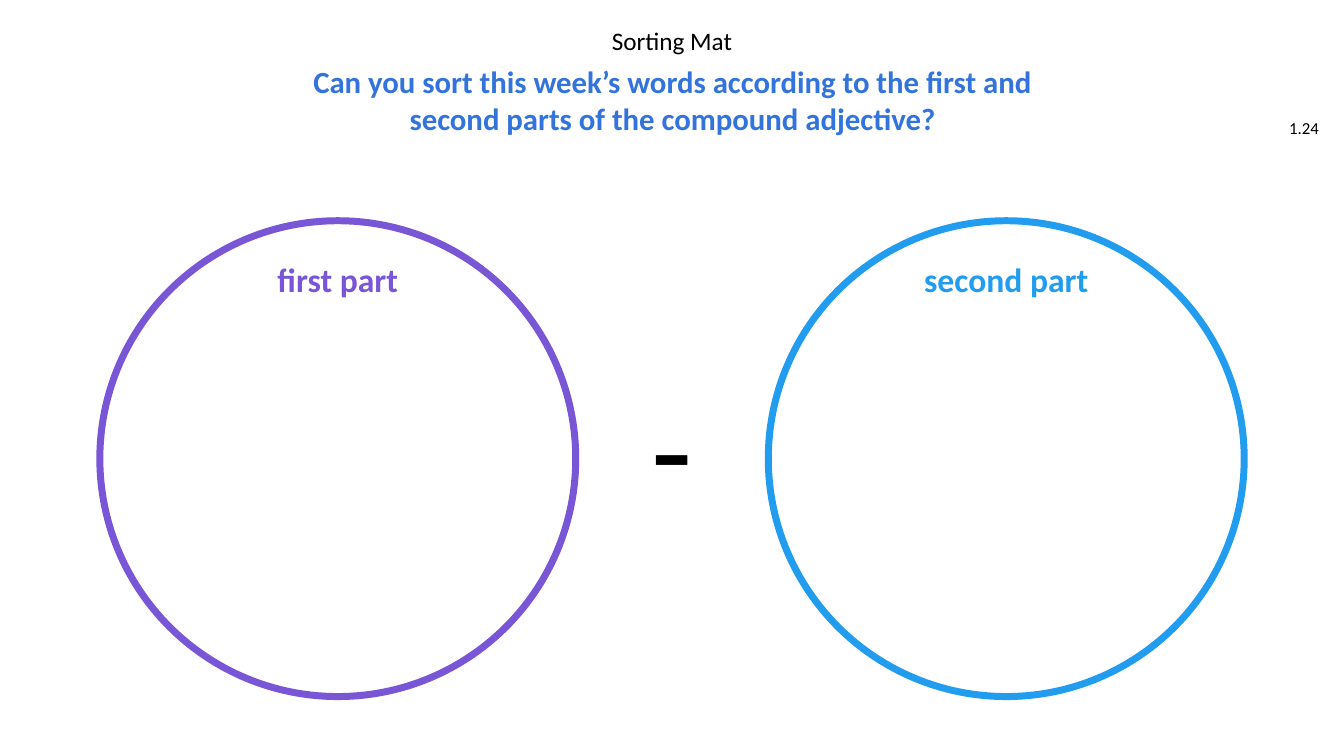
from dataclasses import dataclass

from pptx import Presentation
from pptx.dml.color import RGBColor
from pptx.enum import shapes, text
from pptx.util import Inches, Pt


@dataclass(frozen=True)
class Theme:
    font: str = "Calibri"
    black: str = "000000"
    blue: str = "3373DC"
    purple: str = "7956D6"
    sky: str = "219CEE"
    number_size: int = 12
    title_size: int = 18
    question_size: int = 22
    label_size: int = 24
    hyphen_size: int = 96
    ring_width: int = 5


THEME = Theme()
RING_TOP = 2.19
RING_SIZE = 4.72
LABEL_TOP = 2.52
LABEL_WIDTH = 2.64


def add_text(s, words, box, size, color, bold=False, wrap=True,
             align=text.PP_ALIGN.CENTER, anchor=text.MSO_ANCHOR.TOP):
    """Add a one-paragraph text box; box is left, top, width, height in inches."""
    tf = s.shapes.add_textbox(*map(Inches, box)).text_frame
    tf.word_wrap = wrap
    tf.vertical_anchor = anchor
    p = tf.paragraphs[0]
    p.text = words
    p.alignment = align
    font = p.runs[0].font
    font.name = THEME.font
    font.size = Pt(size)
    font.bold = bold
    font.color.rgb = RGBColor.from_string(color)
    return p


def add_sorting_ring(s, label, left, color):
    ring = s.shapes.add_shape(shapes.MSO_SHAPE.OVAL, Inches(left), Inches(RING_TOP),
                              Inches(RING_SIZE), Inches(RING_SIZE))
    ring.shadow.inherit = False
    ring.fill.background()
    ring.line.color.rgb = RGBColor.from_string(color)
    ring.line.width = Pt(THEME.ring_width)
    label_left = left + (RING_SIZE - LABEL_WIDTH) / 2
    add_text(s, label, (label_left, LABEL_TOP, LABEL_WIDTH, 0.5),
             THEME.label_size, color, bold=True)


def main():
    prs = Presentation()
    prs.slide_width, prs.slide_height = Inches(13.33), Inches(7.5)
    s = prs.slides.add_slide(prs.slide_layouts[6])

    add_text(s, "1.24", (12.55, 1.07, 0.63, 0.4), THEME.number_size, THEME.black,
             align=text.PP_ALIGN.RIGHT, anchor=text.MSO_ANCHOR.MIDDLE)
    title = add_text(s, "Sorting Mat", (2.31, 0.24, 8.71, 0.35),
                     THEME.title_size, THEME.black)
    title.line_spacing = 0.9
    add_sorting_ring(s, "first part", 0.99, THEME.purple)
    add_sorting_ring(s, "second part", 7.62, THEME.sky)
    add_text(s, "Can you sort this week’s words according to the first and "
                "second parts of the compound adjective?",
             (2.88, 0.57, 7.58, 0.84), THEME.question_size, THEME.blue, bold=True)
    add_text(s, "-", (6.31, 3.56, 0.71, 1.72), THEME.hyphen_size, THEME.black, wrap=False)

    prs.save("out.pptx")


if __name__ == "__main__":
    main()
